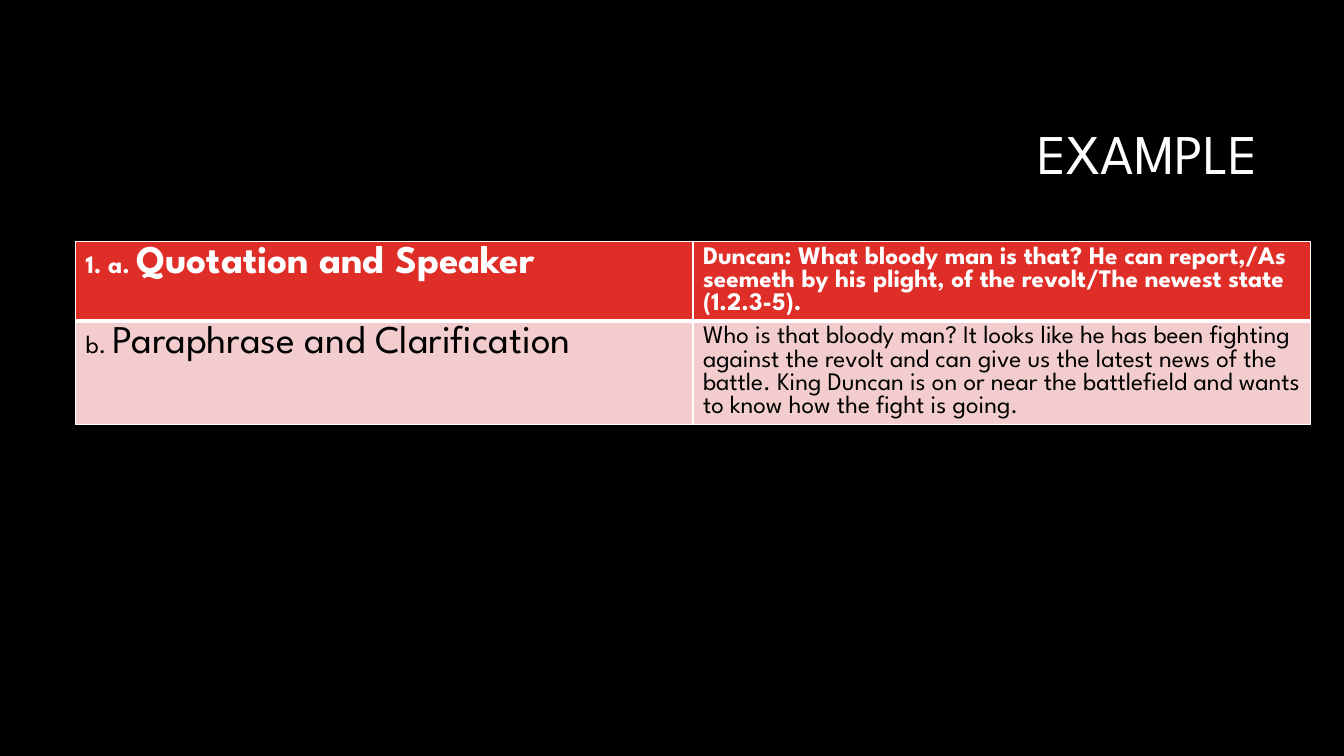
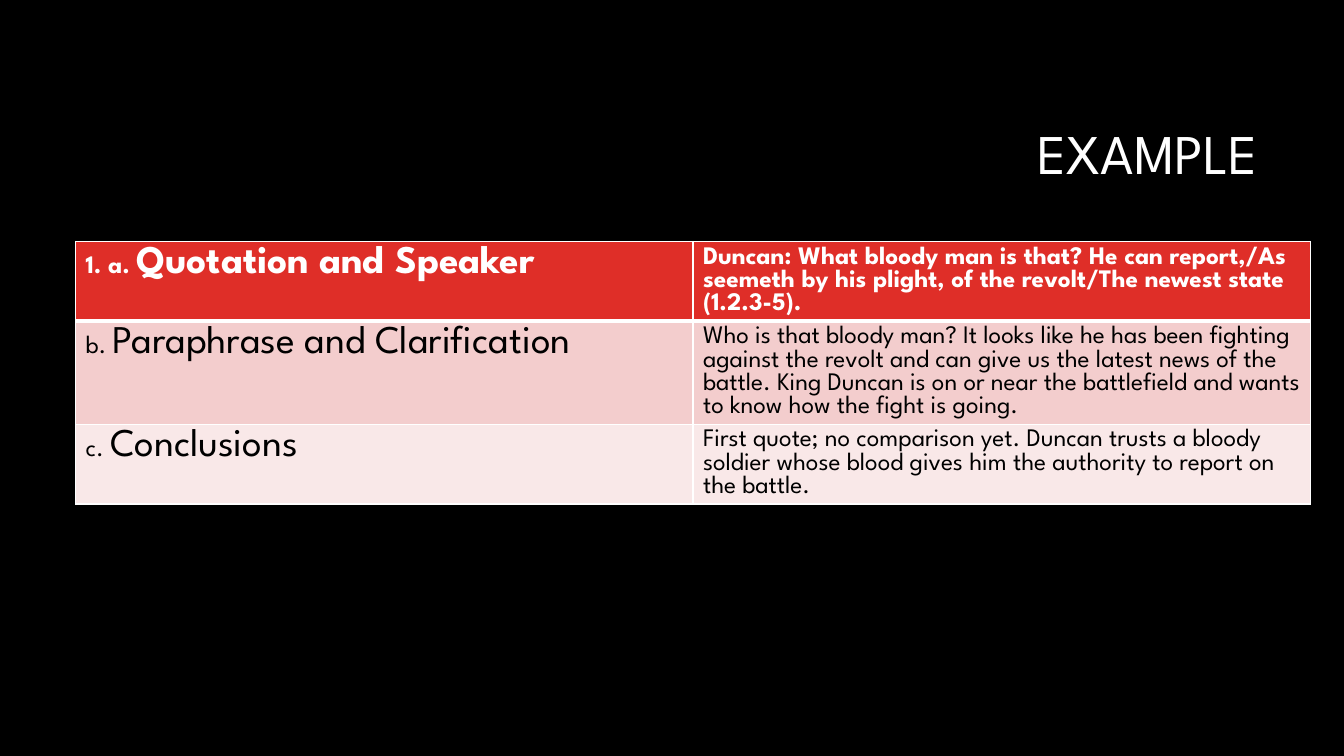
from lxml import etree
from pptx import Presentation
from pptx.dml.color import RGBColor
from pptx.enum.text import MSO_ANCHOR, MSO_AUTO_SIZE, PP_ALIGN
from pptx.oxml.ns import qn
from pptx.util import Emu, Pt

MIDDLE = MSO_ANCHOR.MIDDLE
NO_AUTOFIT = MSO_AUTO_SIZE.NONE
RIGHT = PP_ALIGN.RIGHT

EMU_PER_PX = 9525
TITLE_ONLY = 5
FONT = "League Spartan"
COLORS = {
    "background": "000000",
    "light": "FFFFFF",
    "dark": "000000",
    "header": "DF2E28",
    "odd": "F3CDCD",
    "even": "F9E8E8",
}

# Row marker, row label, answer
STEPS = [
    ("1. a. ", "Quotation and Speaker",
     "Duncan: What bloody man is that? He can report,/As seemeth by his plight, "
     "of the revolt/The newest state (1.2.3-5)."),
    ("b. ", "Paraphrase and Clarification",
     "Who is that bloody man? It looks like he has been fighting against the revolt "
     "and can give us the latest news of the battle. King Duncan is on or near the "
     "battlefield and wants to know how the fight is going."),
    ("c. ", "Conclusions",
     "First quote; no comparison yet. Duncan trusts a bloody soldier whose blood "
     "gives him the authority to report on the battle."),
]
ROW_HEIGHTS = [76, 98, 76]


def px(length):
    return Emu(length * EMU_PER_PX)


def rgb(name):
    return RGBColor.from_string(COLORS[name])


class Deck:
    def __init__(self):
        self.prs = Presentation()
        self.prs.slide_width, self.prs.slide_height = px(1280), px(720)
        backdrop = self.prs.slide_master.background.fill
        backdrop.solid()
        backdrop.fore_color.rgb = rgb("background")
        self.slide = None

    def add_slide(self, heading):
        self.slide = self.prs.slides.add_slide(self.prs.slide_layouts[TITLE_ONLY])
        title = self.slide.shapes.title
        title.left, title.top, title.width, title.height = map(px, (304, 81, 904, 135))
        frame = title.text_frame
        frame.text = heading
        frame.auto_size = NO_AUTOFIT
        frame.vertical_anchor = MIDDLE
        paragraph = frame.paragraphs[0]
        paragraph.alignment = RIGHT
        paragraph.line_spacing = 0.9
        self.style_run(paragraph.runs[0], 40, "light", False)

    def style_run(self, run, size, color, bold):
        run.font.name = FONT
        run.font.size = Pt(size)
        run.font.color.rgb = rgb(color)
        run.font.bold = bold

    def add_steps_table(self, steps):
        heights = ROW_HEIGHTS[:len(steps)]
        table = self.slide.shapes.add_table(
            len(steps), 2, px(72), px(230), px(1176), px(sum(heights))).table
        for index, (marker, label, answer) in enumerate(steps):
            table.rows[index].height = px(heights[index])
            label_cell, answer_cell = table.rows[index].cells
            self.fill_cell(label_cell, index, [(marker, 18), (label, 28)])
            self.fill_cell(answer_cell, index, [(answer, 18)])

    def fill_cell(self, cell, row, pieces):
        """Write (text, size) pieces in the style of the header or of a banded row."""
        is_header = row == 0
        paragraph = cell.text_frame.paragraphs[0]
        for text, size in pieces:
            run = paragraph.add_run()
            run.text = text
            self.style_run(run, size, "light" if is_header else "dark", is_header)
        self.add_borders(cell, top=3 if row == 1 else 1, bottom=3 if is_header else 1)
        cell.fill.solid()
        cell.fill.fore_color.rgb = rgb(
            "header" if is_header else "odd" if row % 2 else "even")

    def add_borders(self, cell, top, bottom):
        """Draw the four cell edges; they must come before the fill in the XML."""
        properties = cell._tc.get_or_add_tcPr()
        for edge, width in (("L", 1), ("R", 1), ("T", top), ("B", bottom)):
            line = etree.SubElement(properties, qn(f"a:ln{edge}"), w=str(Pt(width)))
            solid = etree.SubElement(line, qn("a:solidFill"))
            etree.SubElement(solid, qn("a:srgbClr"), val=COLORS["light"])


def main():
    deck = Deck()
    for step_count in (2, 3):
        deck.add_slide("EXAMPLE")
        deck.add_steps_table(STEPS[:step_count])
    deck.prs.save("out.pptx")


if __name__ == "__main__":
    main()
